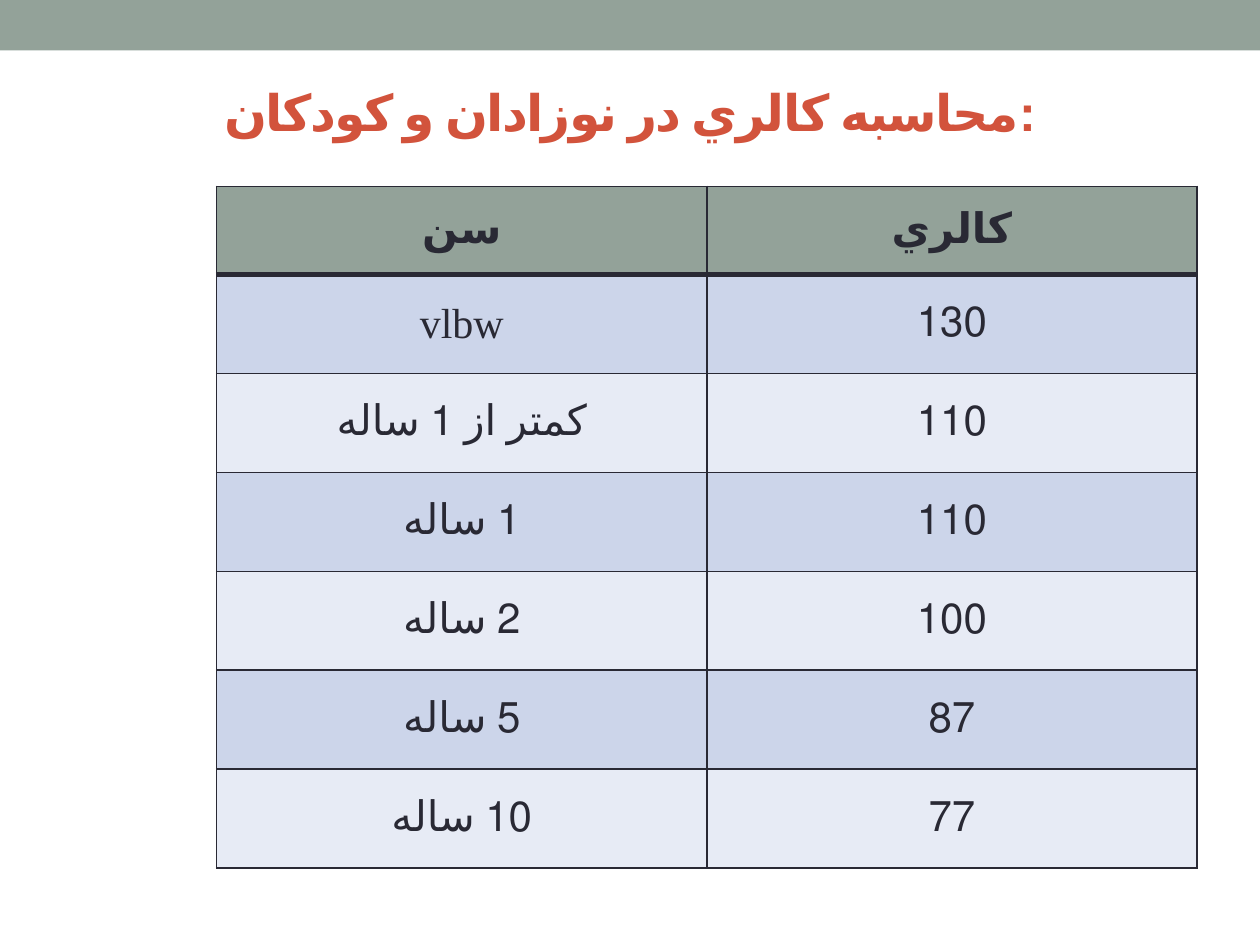
from lxml.etree import SubElement
from pptx import Presentation
from pptx.dml.color import RGBColor
from pptx.enum.lang import MSO_LANGUAGE_ID
from pptx.enum.shapes import MSO_SHAPE
from pptx.enum.text import MSO_ANCHOR, PP_ALIGN
from pptx.oxml.ns import qn
from pptx.util import Inches, Pt

SAGE = RGBColor(0x93, 0xA2, 0x99)
RUST = RGBColor(0xD2, 0x53, 0x3C)
INK = RGBColor(0x29, 0x29, 0x34)
BAND_COLORS = (RGBColor(0xCC, 0xD5, 0xEA), RGBColor(0xE7, 0xEB, 0xF5))

SLIDE_WIDTH, SLIDE_HEIGHT = Inches(10), Inches(7.5)
TABLE_WIDTH, TABLE_HEIGHT = Inches(7.78), Inches(5.41)
HEADER_HEIGHT = Inches(0.7)

CALORIES_BY_AGE = (
    ("سن", "كالري"),
    ("vlbw", "130"),
    ("كمتر از 1 ساله", "110"),
    ("1 ساله", "110"),
    ("2 ساله", "100"),
    ("5 ساله", "87"),
    ("10 ساله", "77"),
)


def write_centred(frame, text, size, color, font_name, bold=False):
    """Fill a text frame with one centred line of Persian text."""
    frame.text = text
    paragraph = frame.paragraphs[0]
    paragraph.alignment = PP_ALIGN.CENTER
    font = paragraph.runs[0].font
    font.size = Pt(size)
    font.bold = bold
    font.name = font_name
    font.color.rgb = color
    font.language_id = MSO_LANGUAGE_ID.FARSI
    return paragraph


def add_top_bar(slide):
    bar = slide.shapes.add_shape(
        MSO_SHAPE.RECTANGLE, 0, 0, SLIDE_WIDTH, Inches(0.4))
    bar.shadow.inherit = False
    bar.fill.solid()
    bar.fill.fore_color.rgb = SAGE
    bar.line.fill.background()


def add_title(slide, text):
    title = slide.shapes.add_textbox(
        Inches(0.5), Inches(0.58), Inches(9), Inches(0.61))
    frame = title.text_frame
    frame.word_wrap = True
    frame.vertical_anchor = MSO_ANCHOR.MIDDLE
    paragraph = write_centred(frame, text, 28.8, RUST, "Arial", bold=True)
    paragraph.runs[0].font._element.set("spc", "-100")


def set_borders(cell, top, bottom):
    """Draw the four cell borders; the sides are always 1 pt wide."""
    properties = cell._tc.get_or_add_tcPr()
    for side, width in (("L", 1), ("R", 1), ("T", top), ("B", bottom)):
        border = SubElement(properties, qn(f"a:ln{side}"), w=str(Pt(width)))
        fill = SubElement(border, qn("a:solidFill"))
        SubElement(fill, qn("a:srgbClr"), val=str(INK))


def format_cell(cell, text, row):
    is_header = row == 0
    set_borders(cell, top=3 if row == 1 else 1, bottom=3 if is_header else 1)
    cell.fill.solid()
    cell.fill.fore_color.rgb = SAGE if is_header else BAND_COLORS[(row - 1) % 2]
    cell.margin_left = cell.margin_right = Inches(0.07)
    cell.margin_top = cell.margin_bottom = 0
    cell.vertical_anchor = MSO_ANCHOR.MIDDLE
    paragraph = write_centred(
        cell.text_frame, text, 24, INK, "Times New Roman", bold=is_header)
    paragraph._p.get_or_add_pPr().set("rtl", "1")


def add_calorie_table(slide, records):
    row_count, column_count = len(records), len(records[0])
    row_height = (TABLE_HEIGHT - HEADER_HEIGHT) // (row_count - 1)
    table = slide.shapes.add_table(
        row_count, column_count, Inches(1.72), Inches(1.48),
        TABLE_WIDTH, TABLE_HEIGHT).table
    for row, record in enumerate(records):
        table.rows[row].height = row_height if row else HEADER_HEIGHT
        for column, text in enumerate(record):
            format_cell(table.cell(row, column), text, row)


def main():
    presentation = Presentation()
    presentation.slide_width = SLIDE_WIDTH
    presentation.slide_height = SLIDE_HEIGHT
    slide = presentation.slides.add_slide(presentation.slide_layouts[6])
    add_top_bar(slide)
    add_title(slide, "محاسبه كالري در نوزادان و كودكان:")
    add_calorie_table(slide, CALORIES_BY_AGE)
    presentation.save("out.pptx")


if __name__ == "__main__":
    main()
